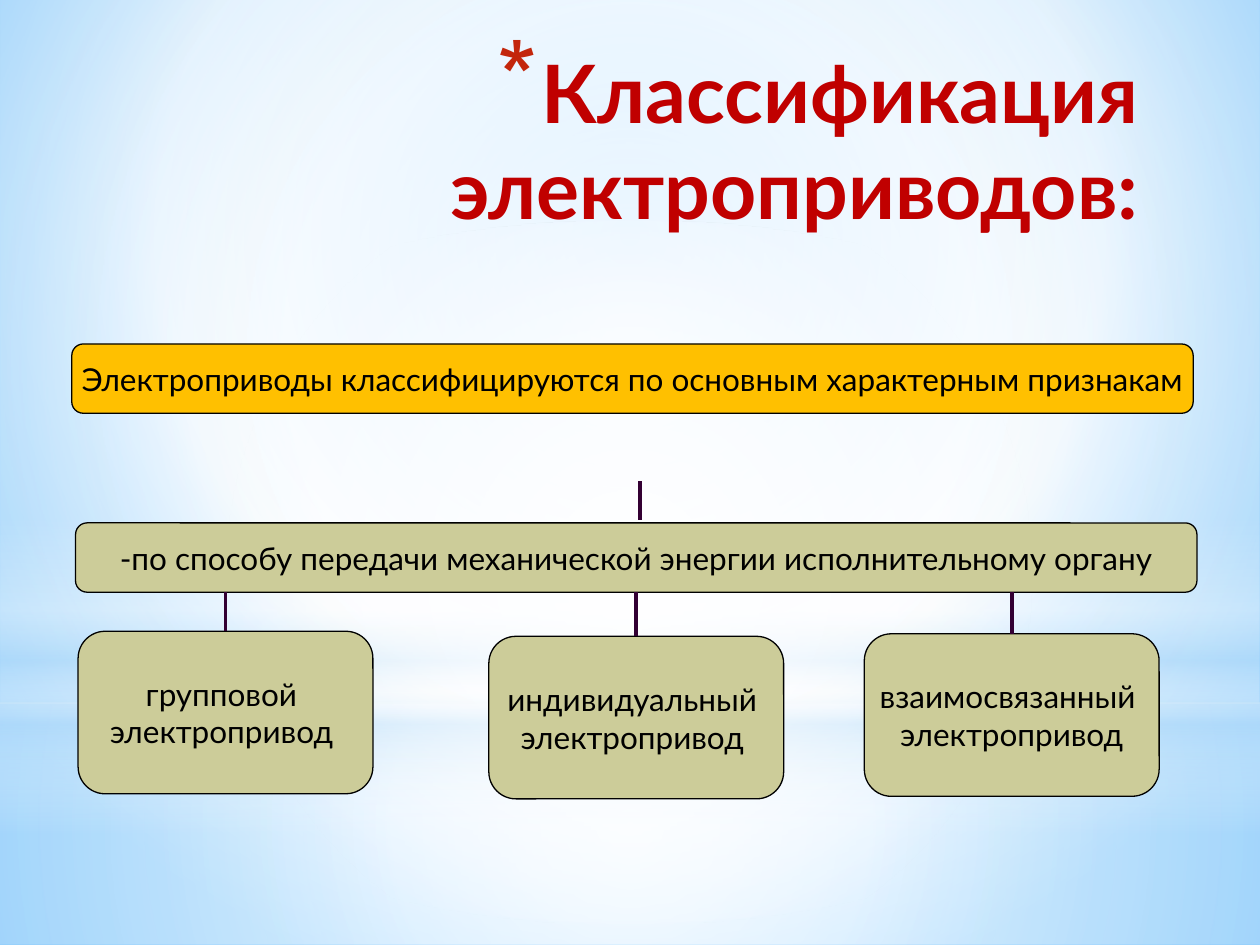
from typing import NamedTuple

from lxml.etree import SubElement
from pptx import Presentation
from pptx.dml.color import RGBColor
from pptx.enum.shapes import MSO_CONNECTOR, MSO_SHAPE
from pptx.enum.text import MSO_ANCHOR, PP_ALIGN
from pptx.oxml.ns import qn
from pptx.util import Inches, Pt

# Grid of 100 columns by 75 rows covering the slide
COLUMNS, ROWS = 100, 75
CELL = Inches(0.1)
FONT = "Lato"
BLACK, RED, AMBER, OLIVE, PLUM = "000000", "C00000", "FFC000", "CCCC99", "330033"
CENTRE = (50, 50, 50, 50)


class Area(NamedTuple):
    column: float
    row: float
    columns: float
    rows: float


class Stop(NamedTuple):
    position: int
    color: str
    opacity: int = 100


class Glow(NamedTuple):
    preset: MSO_SHAPE
    area: Area
    stops: list[Stop]
    focus: tuple | None = CENTRE


class Node(NamedTuple):
    area: Area
    lines: list[str]
    color: str = OLIVE


def cells(count: float) -> int:
    return round(count * CELL)


def place(area: Area) -> list[int]:
    return [cells(value) for value in area]


def rgb(color: str) -> RGBColor:
    return RGBColor.from_string(color)


def add_child(parent, tag: str, **attributes):
    return SubElement(parent, qn(tag), {key: str(value) for key, value in attributes.items()})


def set_gradient(fill, holder, stops: list[Stop], focus: tuple | None) -> None:
    """Radial gradient around focus, or a downward linear one without it."""
    fill.gradient()
    gradient = next(holder.iter(qn("a:gradFill")))
    for child in list(gradient):
        gradient.remove(child)
    stop_list = add_child(gradient, "a:gsLst")
    for stop in stops:
        entry = add_child(stop_list, "a:gs", pos=stop.position * 1000)
        color = add_child(entry, "a:srgbClr", val=stop.color)
        if stop.opacity < 100:
            add_child(color, "a:alpha", val=stop.opacity * 1000)
    if focus is None:
        add_child(gradient, "a:lin", ang=90 * 60000, scaled=0)
    else:
        radial = add_child(gradient, "a:path", path="circle")
        sides = {side: share * 1000 for side, share in zip("ltrb", focus)}
        add_child(radial, "a:fillToRect", **sides)


def add_bullet(paragraph, symbol: str, color: str, percent: int, indent: float) -> None:
    properties = paragraph._p.get_or_add_pPr()
    properties.set("marL", str(cells(indent)))
    properties.set("indent", str(-cells(indent)))
    add_child(add_child(properties, "a:buClr"), "a:srgbClr", val=color)
    add_child(properties, "a:buSzPct", val=percent * 1000)
    add_child(properties, "a:buChar", char=symbol)


def write(frame, lines: list[str], *, size: float, color: str = BLACK, bold: bool = False,
          align=PP_ALIGN.CENTER, anchor=MSO_ANCHOR.MIDDLE, wrap: bool = False,
          bullet: dict | None = None) -> None:
    frame.word_wrap = wrap
    frame.vertical_anchor = anchor
    for index, line in enumerate(lines):
        paragraph = frame.add_paragraph() if index else frame.paragraphs[0]
        paragraph.alignment = align
        if bullet:
            add_bullet(paragraph, **bullet)
        run = paragraph.add_run()
        run.text = line
        run.font.name, run.font.size, run.font.bold = FONT, Pt(size), bold
        run.font.color.rgb = rgb(color)


def draw_glow(shapes, glow: Glow) -> None:
    shape = shapes.add_shape(glow.preset, *place(glow.area))
    shape.shadow.inherit = False
    shape.line.fill.background()
    set_gradient(shape.fill, shape._element.spPr, glow.stops, glow.focus)


def draw_node(shapes, node: Node):
    shape = shapes.add_shape(MSO_SHAPE.ROUNDED_RECTANGLE, *place(node.area))
    shape.shadow.inherit = False
    shape.fill.solid()
    shape.fill.fore_color.rgb = rgb(node.color)
    shape.line.color.rgb = rgb(BLACK)
    shape.line.width = Pt(0.75)
    write(shape.text_frame, node.lines, size=18)
    return shape


def draw_stem(shapes, column: float, top: float, bottom: float):
    stem = shapes.add_connector(MSO_CONNECTOR.STRAIGHT, cells(column), cells(top),
                                cells(column), cells(bottom))
    stem.line.color.rgb = rgb(PLUM)
    stem.line.width = Pt(2.25)
    add_child(stem._element.spPr, "a:effectLst")
    return stem


BACKDROP = [Stop(0, "9ED5FF"), Stop(60, "FFFFFF"), Stop(100, "5BB9FF")]
GLOWS = [
    Glow(MSO_SHAPE.RECTANGLE, Area(0, 55.8, COLUMNS, 19.2),
         [Stop(0, "FFFFFF", 91), Stop(37, "FFFFFF", 76), Stop(100, "B4DCFA", 79)]),
    Glow(MSO_SHAPE.RECTANGLE, Area(0, 0, COLUMNS, 55.8),
         [Stop(0, "FFFFFF", 89), Stop(48, "FFFFFF", 62), Stop(100, "B4DCFA", 79)]),
    Glow(MSO_SHAPE.RECTANGLE, Area(0, 41.2, COLUMNS, 25),
         [Stop(0, "FFFFFF", 0), Stop(29, "FFFFFF", 30), Stop(45, "B4DCFA", 40),
          Stop(55, "FFFFFF", 26), Stop(65, "B4DCFA", 60), Stop(100, "FFFFFF", 0)], None),
    Glow(MSO_SHAPE.OVAL, Area(0, 17.5, COLUMNS, 55.8),
         [Stop(0, "FFFFFF"), Stop(56, "FFFFFF", 0)]),
]
HEADLINE = Node(Area(5.7, 27.3, 89, 5.5),
                ["Электроприводы классифицируются по основным характерным признакам"], AMBER)
CRITERION = Node(Area(6, 41.5, 89, 5.5),
                 ["-по способу передачи механической энергии исполнительному органу"])
DRIVES = [
    Node(Area(6.2, 50.1, 23.4, 12.9), ["групповой ", "электропривод "]),
    Node(Area(38.8, 50.5, 23.4, 12.9), ["индивидуальный ", "электропривод "]),
    Node(Area(68.6, 50.3, 23.4, 12.9), ["взаимосвязанный ", "электропривод"]),
]


def main() -> None:
    deck = Presentation()
    deck.slide_width, deck.slide_height = cells(COLUMNS), cells(ROWS)
    slide = deck.slides.add_slide(deck.slide_layouts[6])
    shapes = slide.shapes

    # Sky-like backdrop
    set_gradient(slide.background.fill, slide._element, BACKDROP, (20, 10, 20, 60))
    for glow in GLOWS:
        draw_glow(shapes, glow)

    # Title
    title = shapes.add_textbox(*place(Area(20.1, 2.9, 71.2, 12.5)))
    write(title.text_frame, ["Классификация электроприводов:"], size=46, color=RED, bold=True,
          align=PP_ALIGN.RIGHT, anchor=MSO_ANCHOR.TOP, wrap=True,
          bullet=dict(symbol="*", color="C3260C", percent=128, indent=3.5))

    # Classification tree
    draw_node(shapes, HEADLINE)
    criterion = draw_node(shapes, CRITERION)
    draw_stem(shapes, 50.8, 38.2, 41.3)
    bar = CRITERION.area
    for drive in DRIVES:
        box = draw_node(shapes, drive)
        middle = drive.area.column + drive.area.columns / 2
        stem = draw_stem(shapes, middle, bar.row + bar.rows, drive.area.row)
        stem.end_connect(box, 0)
        if abs(middle - bar.column - bar.columns / 2) < 0.01:
            stem.begin_connect(criterion, 2)

    deck.save("out.pptx")


if __name__ == "__main__":
    main()
